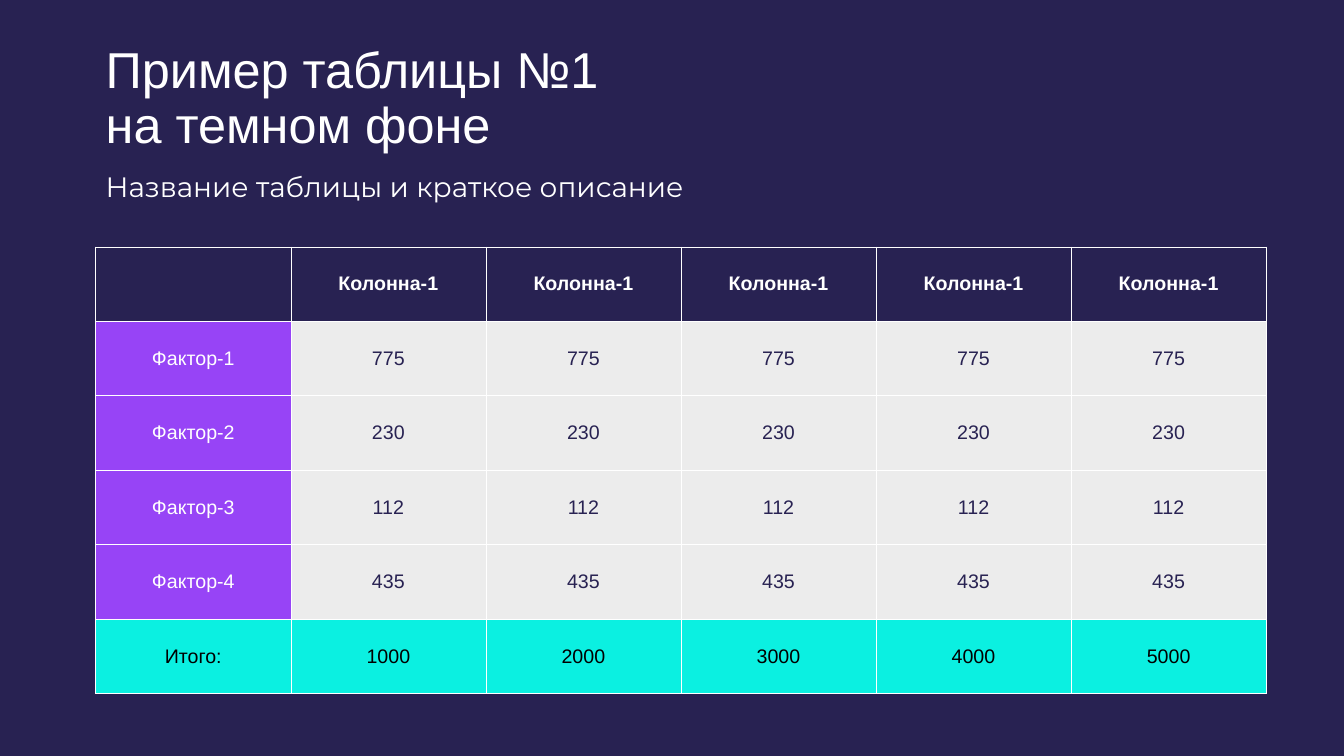
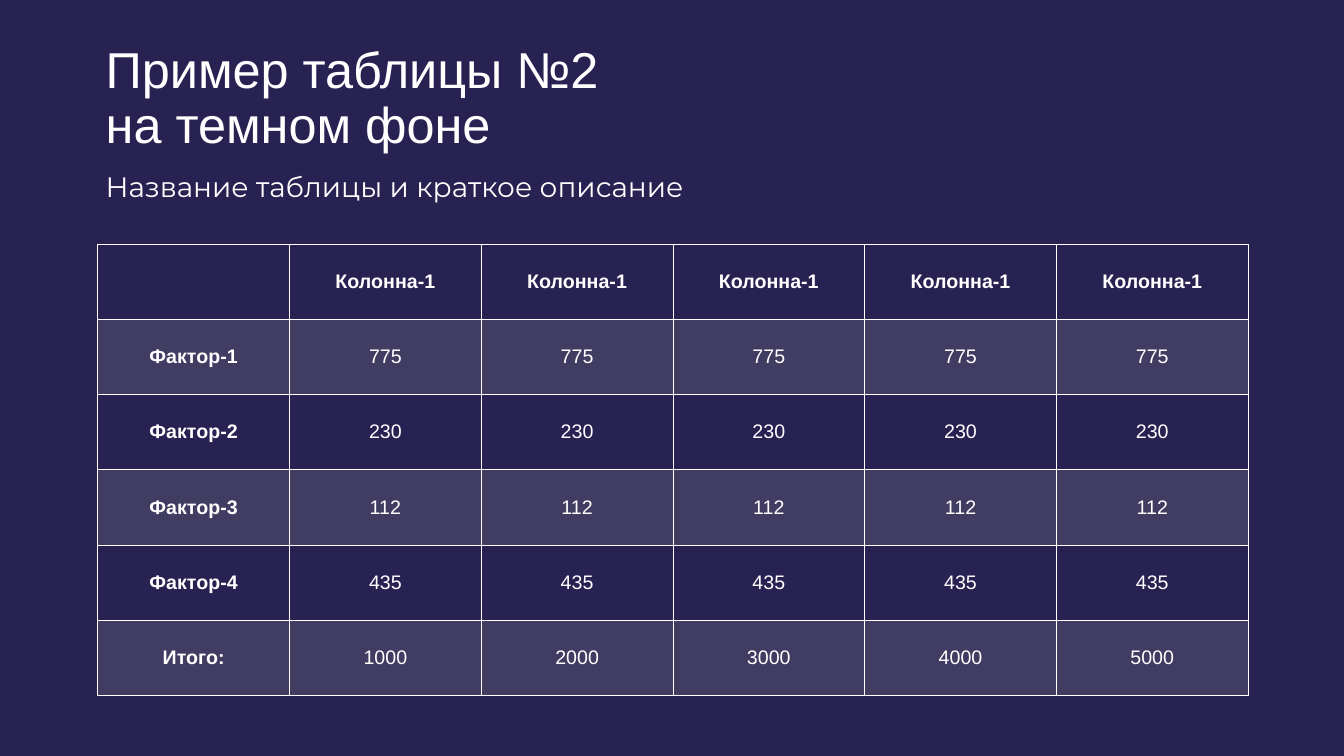
from lxml.etree import SubElement
from pptx import Presentation
from pptx.dml.color import RGBColor
from pptx.enum.text import MSO_ANCHOR, MSO_AUTO_SIZE, PP_ALIGN
from pptx.oxml.ns import qn
from pptx.util import Inches, Pt

NAVY, WHITE, BLACK = "282252", "FFFFFF", "000000"
VIOLET, CYAN, LIGHT, GREY = "9744F6", "0BF0E1", "ECECEC", "A5A5A5"

TITLE = {"size": Pt(36), "name": "Arial"}
SUBTITLE = {"size": Pt(20), "name": "Montserrat"}
CELL = {"size": Pt(14), "name": "Arial"}


def rgb(code):
    return RGBColor.from_string(code)


def write(para, text, color, formats):
    para.text = text
    for span in para.runs:
        for name, value in formats.items():
            setattr(span.font, name, value)
        span.font.color.rgb = rgb(color)


# Table contents, the same on both slides
COUNT = 5
ROWS = [[""] + ["Колонна-1"] * COUNT]
for number, value in enumerate(("775", "230", "112", "435"), 1):
    ROWS.append([f"Фактор-{number}"] + [value] * COUNT)
ROWS.append(["Итого:"] + [str(1000 * step) for step in range(1, COUNT + 1)])

# Row looks: (fill, text colour) of the label cell, then of the value cells
CLEAR, VEIL = [(None, WHITE)] * 2, [(GREY, WHITE)] * 2
COLORED = [[(None, WHITE), (NAVY, WHITE)]]
COLORED += [[(VIOLET, WHITE), (LIGHT, NAVY)]] * 4
COLORED += [[(CYAN, BLACK)] * 2]

# Title, table frame, row looks, fill opacity in percent, bold labels
SLIDES = [
    ("Пример таблицы №1\vна темном фоне", (0.95, 2.45, 11.61, 4.43), COLORED, 100, False),
    ("Пример таблицы №2\vна темном фоне", (0.97, 2.42, 11.41, 4.48), [CLEAR, VEIL] * 3, 20, True),
]

deck = Presentation()
deck.slide_width, deck.slide_height = Inches(13.33), Inches(7.5)

for title, frame, looks, opacity, bold_labels in SLIDES:
    page = deck.slides.add_slide(deck.slide_layouts[6])
    page.background.fill.solid()
    page.background.fill.fore_color.rgb = rgb(NAVY)

    # Table
    left, top, width, height = (Inches(length) for length in frame)
    table = page.shapes.add_table(len(ROWS), COUNT + 1, left, top, width, height).table
    table.first_row = table.horz_banding = False

    for row, (texts, look) in enumerate(zip(ROWS, looks)):
        for column, text in enumerate(texts):
            cell = table.cell(row, column)
            fill, color = look[min(column, 1)]
            bold = row == 0 or (bold_labels and column == 0)
            cell.vertical_anchor = MSO_ANCHOR.MIDDLE
            para = cell.text_frame.paragraphs[0]
            para.alignment = PP_ALIGN.CENTER
            write(para, text, color, CELL | {"bold": bold})

            # Borders come before the fill in the cell properties
            properties = cell._tc.get_or_add_tcPr()
            for side in ("a:lnL", "a:lnR", "a:lnT", "a:lnB"):
                line = SubElement(properties, qn(side), w=str(Pt(0.5)))
                SubElement(SubElement(line, qn("a:solidFill")), qn("a:srgbClr"), val=WHITE)

            if fill is None:
                cell.fill.background()
                continue
            cell.fill.solid()
            cell.fill.fore_color.rgb = rgb(fill)
            if opacity < 100:
                shade = properties.find(qn("a:solidFill"))[0]
                SubElement(shade, qn("a:alpha"), val=str(opacity * 1000))

    # Title and subtitle
    for text, place, formats, spacing, fit in (
        (title, (0.95, 0.4, 11.61, 1.45), TITLE, 0.9, MSO_AUTO_SIZE.NONE),
        ("Название таблицы и краткое описание", (0.95, 1.63, 9.61, 0.44),
         SUBTITLE, 1.0, MSO_AUTO_SIZE.SHAPE_TO_FIT_TEXT),
    ):
        box = page.shapes.add_textbox(*(Inches(length) for length in place))
        box.text_frame.word_wrap = True
        box.text_frame.auto_size = fit
        para = box.text_frame.paragraphs[0]
        para.line_spacing = spacing
        write(para, text, WHITE, formats)

deck.save("out.pptx")
